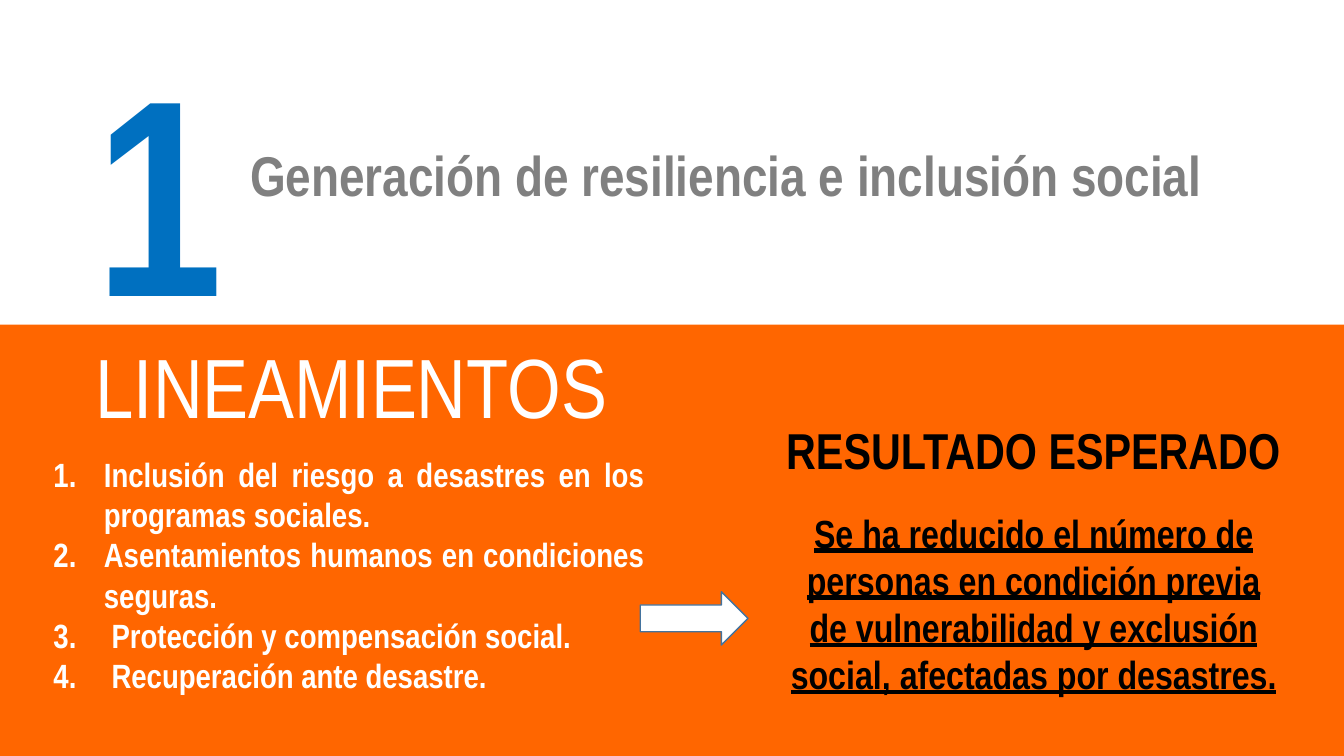
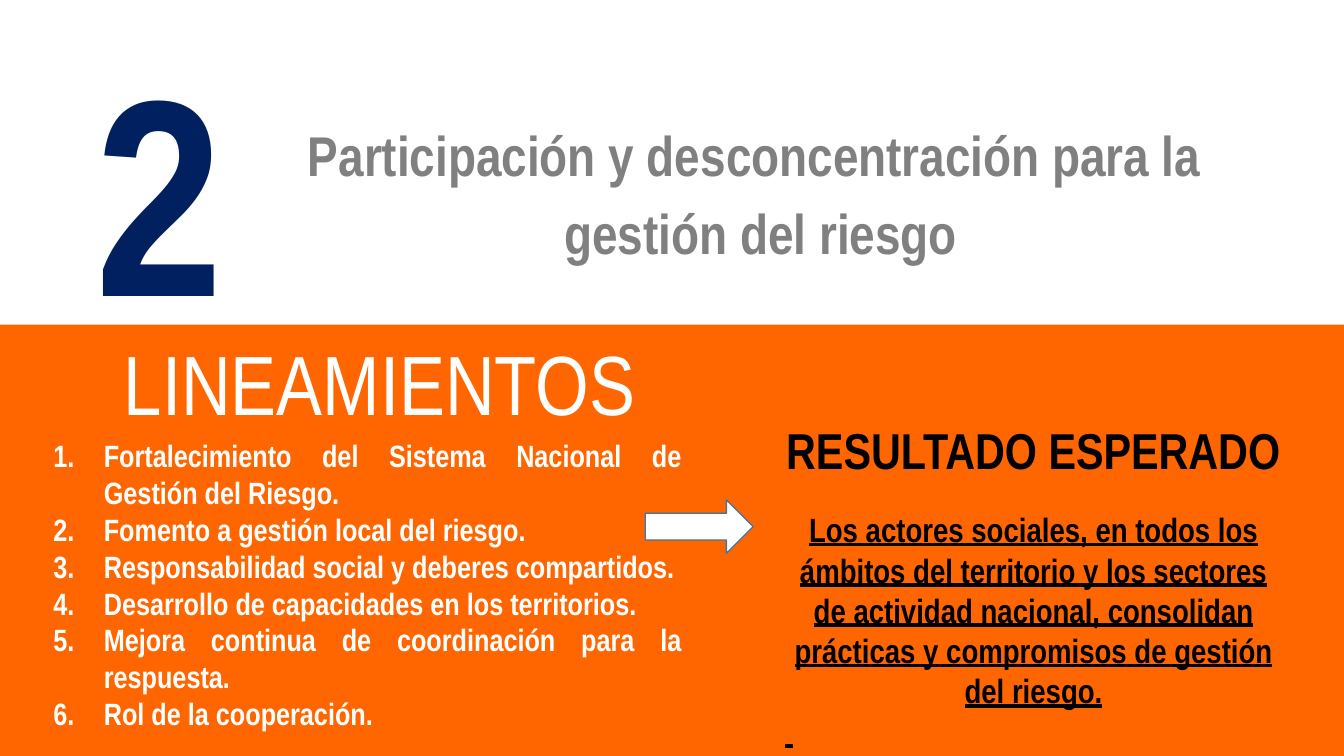
from dataclasses import dataclass
from lxml.etree import SubElement
from pptx import Presentation
from pptx.dml.color import RGBColor
from pptx.enum.shapes import MSO_SHAPE
from pptx.enum.text import MSO_ANCHOR, MSO_AUTO_SIZE, PP_ALIGN
from pptx.oxml.ns import qn
from pptx.util import Inches, Pt

WIDE, HIGH = 13.33, 7.5
HEAD, LABEL = "LINEAMIENTOS", "RESULTADO ESPERADO"

PAGES = [
    dict(
        mark="1", tint="0070C0",
        title=["Generación de resiliencia e inclusión social"],
        area=(2.33, 1.34, 9.74, 0.77), lead=1.0,
        head=(0.85, 3.27), list=(0.43, 4.45, 6.06, 2.83), size=24,
        items=["Inclusión del riesgo a desastres en los programas sociales.",
               "Asentamientos humanos en condiciones seguras.",
               " Protección y compensación social.",
               " Recuperación ante desastre."],
        arrow=(6.35, 5.87), goal_size=28, tail=[],
        goal="Se ha reducido el número de personas en condición previa de "
             "vulnerabilidad y exclusión social, afectadas por desastres."),
    dict(
        mark="2", tint="002060",
        title=["Participación y desconcentración para la ", "gestión del riesgo"],
        area=(2.91, 1.05, 9.27, 1.65), lead=1.15,
        head=(1.13, 3.24), list=(0.43, 4.28, 6.43, 3.06), size=22,
        items=["Fortalecimiento del Sistema Nacional de Gestión del Riesgo.",
               "Fomento a gestión local del riesgo.",
               "Responsabilidad social y deberes compartidos.",
               "Desarrollo de capacidades en los territorios.",
               "Mejora continua de coordinación para la respuesta.",
               "Rol de la cooperación."],
        arrow=(6.4, 4.96), goal_size=24, tail=[" "],
        goal="Los actores sociales, en todos los ámbitos del territorio y los "
             "sectores de actividad nacional, consolidan prácticas y "
             "compromisos de gestión del riesgo."),
]


@dataclass(frozen=True)
class Theme:
    font: str = "Arial Narrow"
    band: str = "FF6600"
    light: str = "FFFFFF"
    dark: str = "000000"
    gray: str = "808080"
    edge: str = "43739E"
    mark: int = 200
    head: int = 60
    title: int = 40
    label: int = 36
    gap: int = 21


T = Theme()


def color(code):
    return RGBColor.from_string(code)


def place(shape, box):
    shape.left, shape.top, shape.width, shape.height = map(Inches, box)


def prepare(shape, wrap=True):
    frame = shape.text_frame
    frame.auto_size = MSO_AUTO_SIZE.NONE
    frame.word_wrap = wrap
    frame.vertical_anchor = MSO_ANCHOR.TOP
    return frame


def write(frame, text, size, tint, bold=True, line=None,
          align=PP_ALIGN.LEFT, before=0, lead=1.0):
    para = frame.paragraphs[0]
    if para.runs:
        para = frame.add_paragraph()
    para.alignment = align
    para.line_spacing = lead
    para.space_before = Pt(before)
    run = para.add_run()
    run.text = text
    font = run.font
    font.name, font.size, font.bold, font.underline = T.font, Pt(size), bold, line
    font.color.rgb = color(tint)
    return para


def number(para):
    props = para._p.get_or_add_pPr()
    props.set("marL", str(Inches(0.5)))
    props.set("indent", str(-Inches(0.5)))
    SubElement(props, qn("a:buFont"), typeface=T.font)
    SubElement(props, qn("a:buAutoNum"), type="arabicPeriod")


def text_box(slide, box):
    return prepare(slide.shapes.add_textbox(*map(Inches, box)))


def block(slide, kind, box, fill, edge=None):
    shape = slide.shapes.add_shape(kind, *map(Inches, box))
    shape.shadow.inherit = False
    shape.fill.solid()
    shape.fill.fore_color.rgb = color(fill)
    if edge:
        shape.line.color.rgb = color(edge)
        shape.line.width = Pt(1)
    else:
        shape.line.fill.background()
    return shape


def share_band(slide):
    top = 3.22
    band = block(slide, MSO_SHAPE.RECTANGLE, (0, top, WIDE, HIGH - top), T.band)
    first = slide.slide_layout.placeholders[0]
    first.element.addprevious(band.element)


def build(slide, page):
    title, body = slide.shapes.title, slide.placeholders[1]
    place(title, page["area"])
    frame = prepare(title, wrap=False)
    for text in page["title"]:
        write(frame, text, T.title, T.gray, align=PP_ALIGN.CENTER, lead=page["lead"])

    place(body, page["list"])
    frame = prepare(body)
    for text in page["items"]:
        number(write(frame, text, page["size"], T.light, align=PP_ALIGN.JUSTIFY))

    write(text_box(slide, (0.85, 0.11, 0.91, 3.47)), page["mark"], T.mark, page["tint"])
    write(text_box(slide, (*page["head"], 5.35, 1.11)), HEAD, T.head, T.light, bold=False)

    frame = text_box(slide, (7.69, 4.11, 5.12, 3.23))
    write(frame, LABEL, T.label, T.dark, align=PP_ALIGN.CENTER)
    size = page["goal_size"]
    write(frame, page["goal"], size, T.dark, line=True,
          align=PP_ALIGN.CENTER, before=T.gap)
    for text in page["tail"]:
        write(frame, text, size, T.dark, line=True)

    block(slide, MSO_SHAPE.RIGHT_ARROW, (*page["arrow"], 1.07, 0.53), T.light, T.edge)


def main():
    deck = Presentation()
    deck.slide_width, deck.slide_height = Inches(WIDE), Inches(HIGH)
    layout = deck.slide_layouts[1]
    for page in PAGES:
        build(deck.slides.add_slide(layout), page)
    share_band(deck.slides[0])
    deck.save("out.pptx")


if __name__ == "__main__":
    main()
